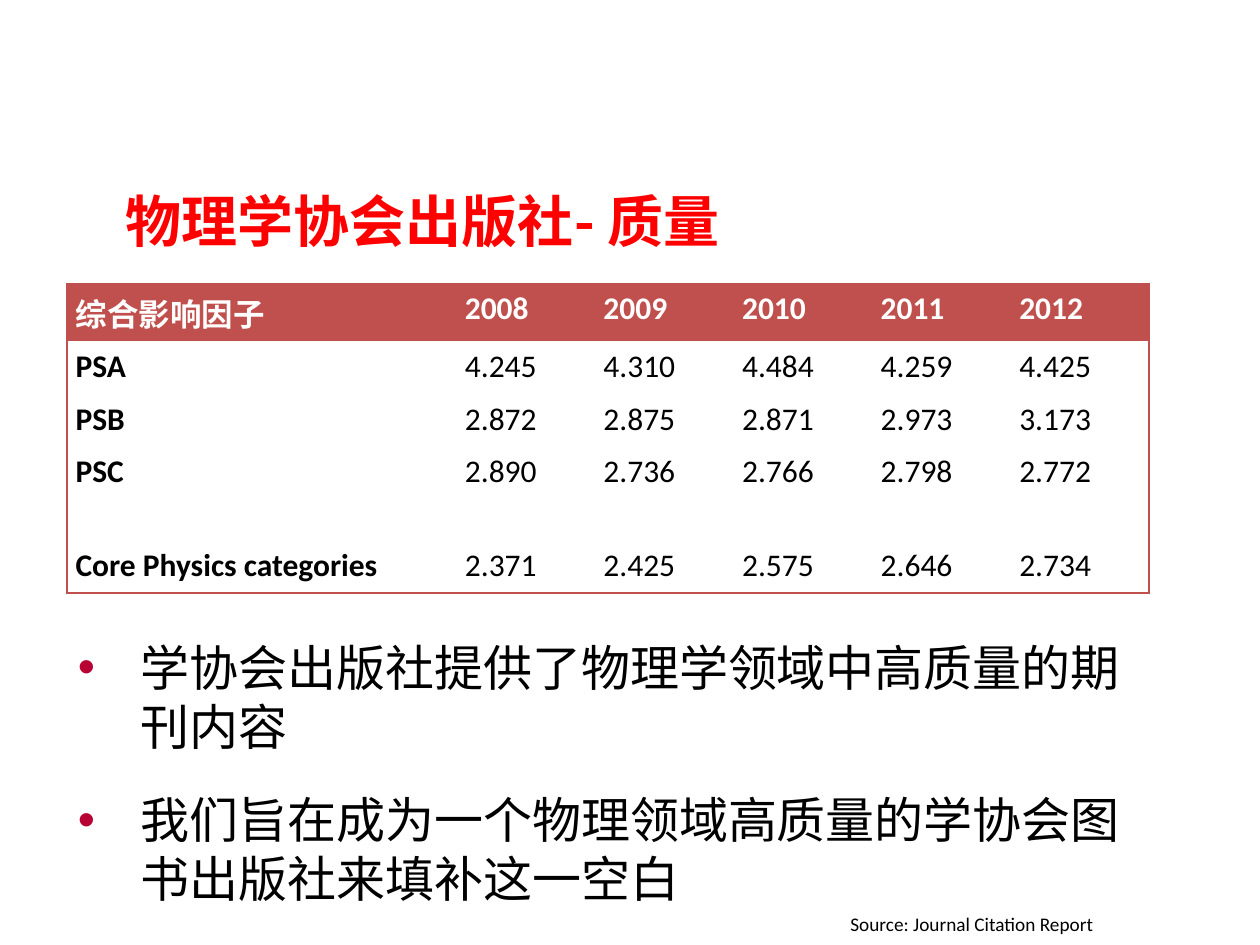
from lxml.etree import SubElement
from pptx import Presentation
from pptx.dml.color import RGBColor
from pptx.enum.text import MSO_ANCHOR
from pptx.oxml import parse_xml
from pptx.oxml.ns import nsdecls, qn
from pptx.util import Inches, Pt

COLORS = {"title": "FF0000", "accent": "C0504D", "bullet": "B60334",
          "text": "000000", "header_text": "FFFFFF"}
LATIN_FONT, CHINESE_FONT = "Calibri", "Noto Sans CJK SC"
NO_STYLE_NO_GRID = "{2D5ABB26-0587-4C30-8999-92F81FD0307C}"

TITLE = "物理学协会出版社- 质量"
IMPACT_FACTORS = [
    ("综合影响因子", "2008", "2009", "2010", "2011", "2012"),
    ("PSA", "4.245", "4.310", "4.484", "4.259", "4.425"),
    ("PSB", "2.872", "2.875", "2.871", "2.973", "3.173"),
    ("PSC", "2.890", "2.736", "2.766", "2.798", "2.772"),
    ("",) * 6,
    ("Core Physics categories", "2.371", "2.425", "2.575", "2.646", "2.734"),
]
COLUMN_WIDTHS = [3.09] + [1.1] * 5
ROW_HEIGHTS = [0.46, 0.42, 0.42, 0.42, 0.32, 0.42]
BULLETS = ["学协会出版社提供了物理学领域中高质量的期刊内容",
           "我们旨在成为一个物理领域高质量的学协会图书出版社来填补这一空白"]
SOURCE = "Source: Journal Citation Report"


def add_run(paragraph, text, size, color, bold=False, font=LATIN_FONT):
    run = paragraph.add_run()
    run.text = text
    run.font.size = Pt(size)
    run.font.bold = bold
    run.font.name = font
    run.font.color.rgb = RGBColor.from_string(COLORS[color])
    east_asian = SubElement(run.font._element, qn("a:ea"))
    east_asian.set("typeface", CHINESE_FONT)


def add_text_box(slide, left, top, width, height):
    frame = slide.shapes.add_textbox(
        Inches(left), Inches(top), Inches(width), Inches(height)).text_frame
    frame.word_wrap = True
    return frame


def add_bullet(paragraph):
    properties = paragraph._p.get_or_add_pPr()
    properties.set("marL", str(Inches(0.5)))
    properties.set("indent", str(-Inches(0.5)))
    color = SubElement(properties, qn("a:buClr"))
    SubElement(color, qn("a:srgbClr")).set("val", COLORS["bullet"])
    SubElement(properties, qn("a:buFont")).set("typeface", "Arial")
    SubElement(properties, qn("a:buChar")).set("char", "•")


def set_borders(cell, sides):
    """Draw an accent line on the given sides; schema order is L, R, T, B."""
    for index, side in enumerate(sides):
        cell._tc.get_or_add_tcPr().insert(index, parse_xml(
            f'<a:ln{side} {nsdecls("a")} w="{Pt(1)}"><a:solidFill>'
            f'<a:srgbClr val="{COLORS["accent"]}"/></a:solidFill></a:ln{side}>'))


def fill_cell(cell, text, row, column):
    is_header = row == 0
    cell.margin_left = cell.margin_right = Inches(0.07)
    cell.margin_top = cell.margin_bottom = 0
    if is_header:
        cell.fill.solid()
        cell.fill.fore_color.rgb = RGBColor.from_string(COLORS["accent"])
    else:
        cell.fill.background()
    edges = {"L": column == 0, "R": column == len(COLUMN_WIDTHS) - 1,
             "T": is_header, "B": row == len(ROW_HEIGHTS) - 1}
    set_borders(cell, [side for side, on_edge in edges.items() if on_edge])
    if text:
        paragraph = cell.text_frame.paragraphs[0]
        paragraph.line_spacing = 1.15
        paragraph.space_after = Pt(10)
        add_run(paragraph, text, 18, "header_text" if is_header else "text",
                bold=is_header or column == 0)


def add_impact_table(slide):
    table = slide.shapes.add_table(
        len(ROW_HEIGHTS), len(COLUMN_WIDTHS), Inches(0.53), Inches(2.25),
        Inches(sum(COLUMN_WIDTHS)), Inches(sum(ROW_HEIGHTS))).table
    table.horz_banding = False
    table._tbl.tblPr.find(qn("a:tableStyleId")).text = NO_STYLE_NO_GRID
    for column, width in zip(table.columns, COLUMN_WIDTHS):
        column.width = Inches(width)
    for row, height in zip(table.rows, ROW_HEIGHTS):
        row.height = Inches(height)
    for row, values in enumerate(IMPACT_FACTORS):
        for column, text in enumerate(values):
            fill_cell(table.cell(row, column), text, row, column)


def main():
    presentation = Presentation()
    presentation.slide_width, presentation.slide_height = Inches(10), Inches(7.5)
    slide = presentation.slides.add_slide(presentation.slide_layouts[6])

    title = add_text_box(slide, 0.9, 1.5, 8.83, 0.5)
    title.vertical_anchor = MSO_ANCHOR.MIDDLE
    add_run(title.paragraphs[0], TITLE, 32, "title", True, CHINESE_FONT)

    add_impact_table(slide)

    for index, text in enumerate(BULLETS):
        paragraph = add_text_box(
            slide, 0.52, 5.01 + 1.21 * index, 8.57, 1.04).paragraphs[0]
        add_bullet(paragraph)
        add_run(paragraph, text, 28, "text")

    source = add_text_box(slide, 6.65, 7.19, 3.23, 0.29)
    add_run(source.paragraphs[0], SOURCE, 11, "text")
    presentation.save("out.pptx")


if __name__ == "__main__":
    main()
